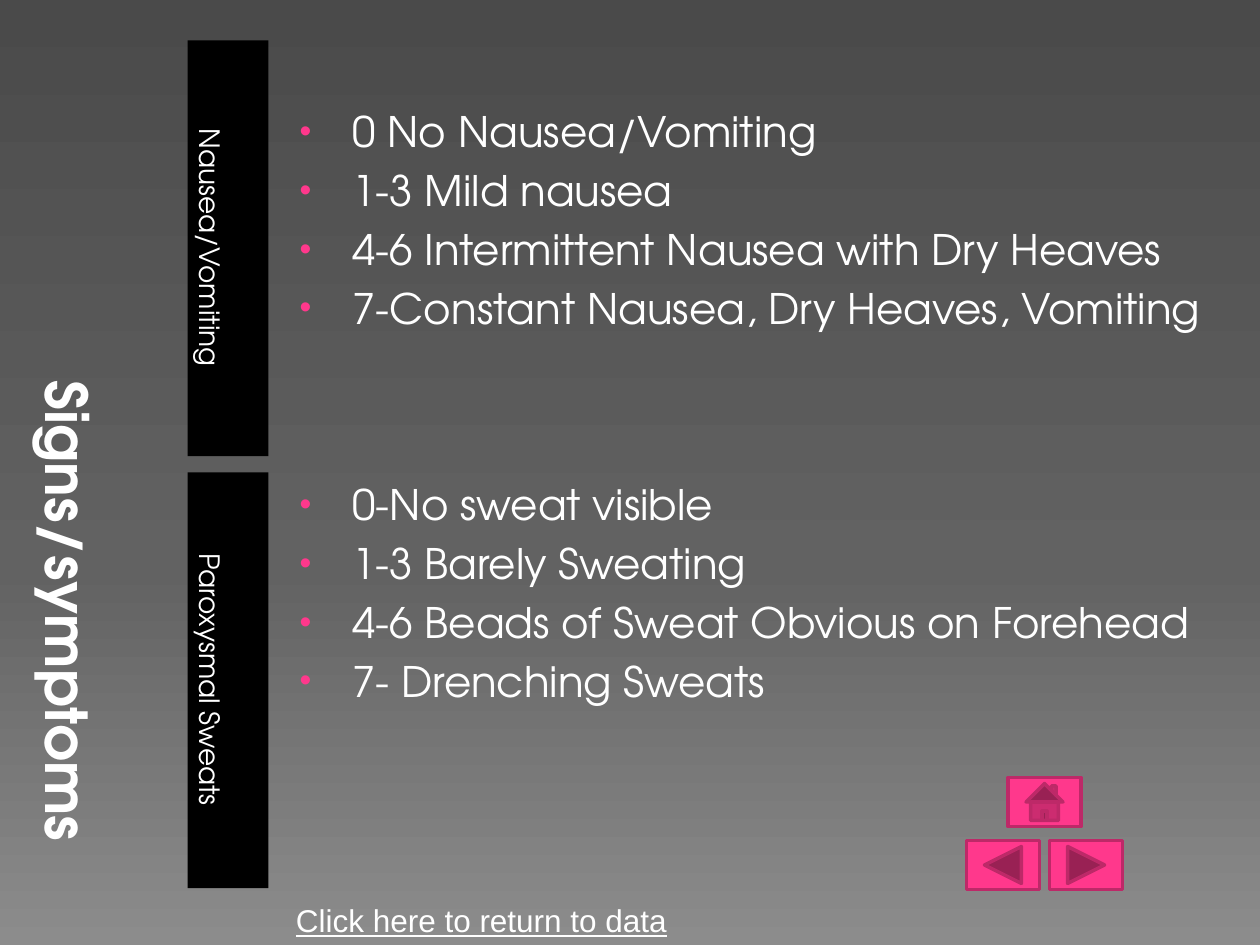
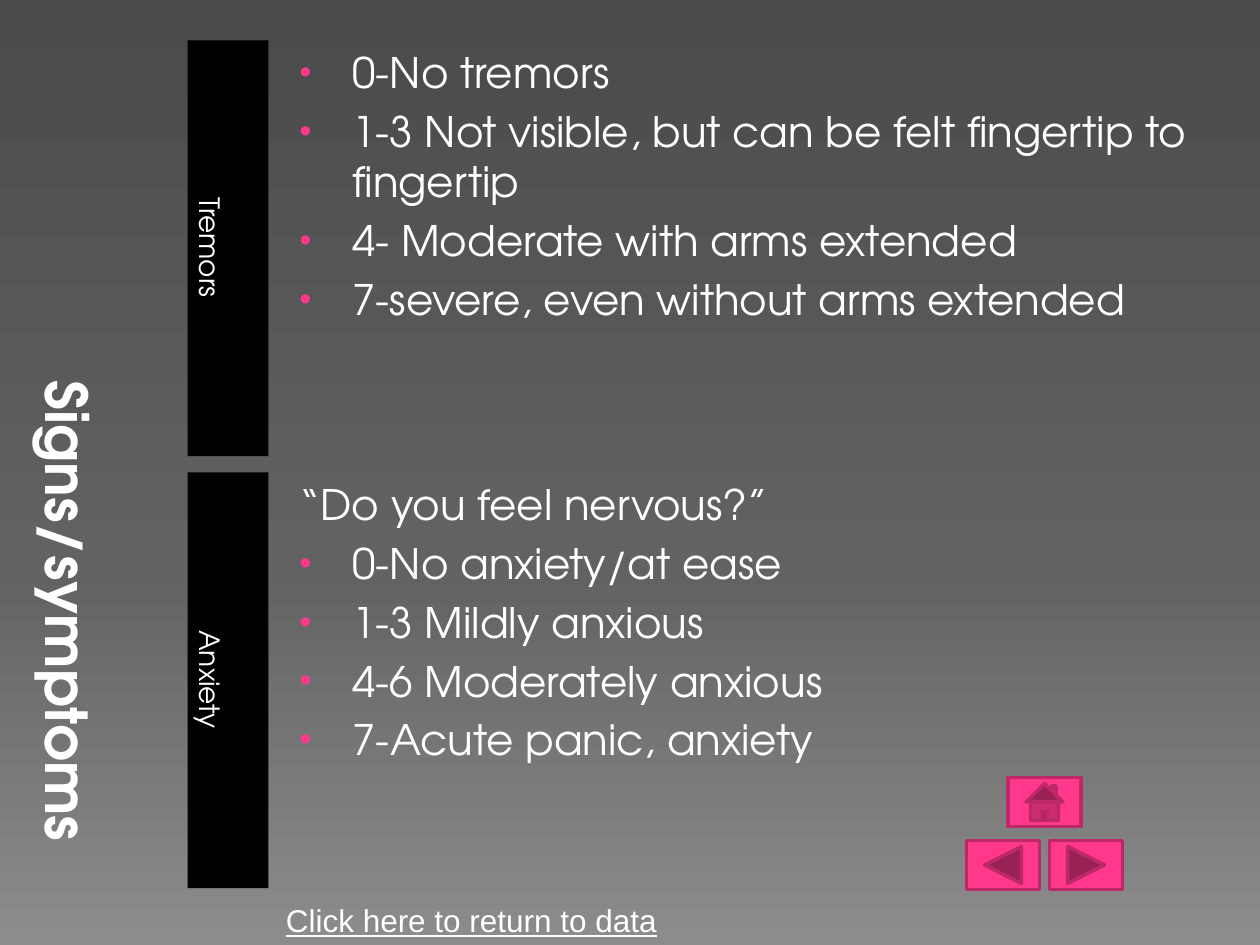
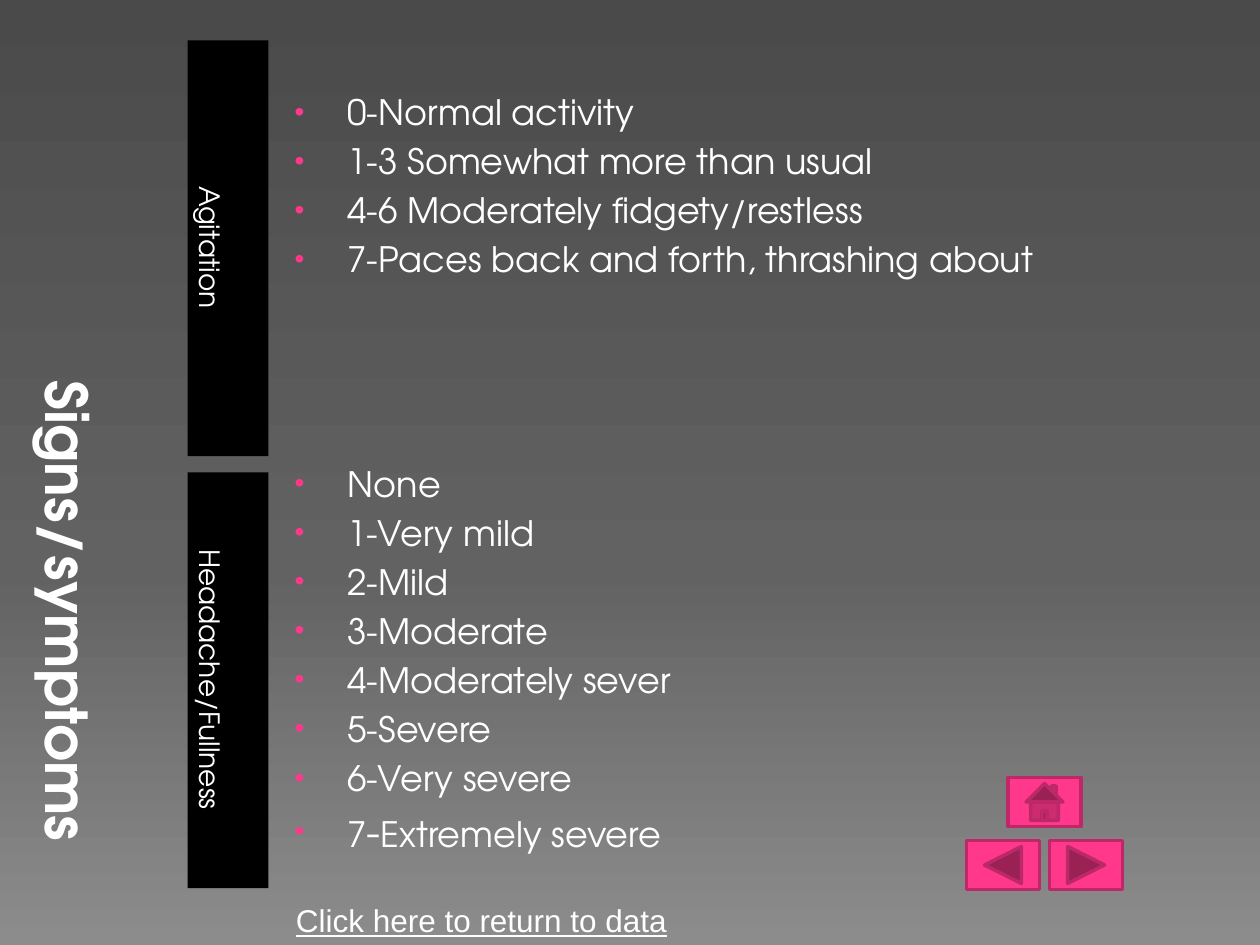
from lxml.etree import SubElement
from pptx import Presentation
from pptx.dml.color import RGBColor
from pptx.enum.shapes import MSO_SHAPE
from pptx.enum.text import MSO_ANCHOR, MSO_AUTO_SIZE, PP_ALIGN
from pptx.oxml.ns import qn
from pptx.util import Inches, Pt

COLORS = {
    "text": "FFFFFF",
    "label": "000000",
    "accent": "FF388C",
    "accent_edge": "BD2968",
}
BACKGROUND_STOPS = [(0, "4A4A4A"), (60, "626262"), (100, "8C8C8C")]
HEAD_FONT = "TeX Gyre Adventor"
LINK_FONT = "Arial"
TITLE_BOX = (0.27, 0.32, 1.17, 6.73)
LABEL_BOXES = [(1.49, 0.32, 0.64, 3.3), (1.49, 3.75, 0.64, 3.3)]
SCALE_BOXES = [(2.21, 0.32, 7.5, 3.3), (2.21, 3.75, 7.5, 3.3)]
NAV_BOX = (7.67, 6.17, 1.24, 0.89)

SLIDES = [
    {
        "labels": ["Nausea/Vomiting", "Paroxysmal Sweats"],
        "scales": [
            ["0 No Nausea/Vomiting", "1-3 Mild nausea",
             "4-6 Intermittent Nausea with Dry Heaves",
             "7-Constant Nausea, Dry Heaves, Vomiting"],
            ["0-No sweat visible", "1-3 Barely Sweating",
             "4-6 Beads of Sweat Obvious on Forehead", "7- Drenching Sweats"],
        ],
        "drops": [0.47, 0],
    },
    {
        "labels": ["Tremors", "Anxiety"],
        "scales": [
            ["0-No tremors",
             "1-3 Not visible, but can be felt fingertip to fingertip",
             "4- Moderate with arms extended",
             "7-severe, even without arms extended"],
            ["“Do you feel nervous?”", "0-No anxiety/at ease",
             "1-3 Mildly anxious", "4-6 Moderately anxious",
             "7-Acute panic, anxiety"],
        ],
        "link_left": 2.17,
    },
    {
        "labels": ["Agitation", "Headache/Fullness"],
        "scales": [
            ["0-Normal activity", "1-3 Somewhat more than usual",
             "4-6 Moderately fidgety/restless",
             "7-Paces back and forth, thrashing about"],
            ["None", "1-Very mild", "2-Mild", "3-Moderate",
             "4-Moderately sever", "5-Severe", "6-Very severe",
             [("7", 20), ("-", 24), ("Extremely severe", 20)]],
        ],
        "boxes": [(2.17, 0.67, 7.5, 2.97), (2.17, 3.17, 7.5, 3.3)],
        "drops": [0, 0.45],
        "size": 20,
    },
]


def rgb(name):
    return RGBColor.from_string(COLORS[name])


def inches(box):
    return [Inches(v) for v in box]


def style_font(p, size, name=HEAD_FONT):
    p.font.size = Pt(size)
    p.font.name = name
    p.font.color.rgb = rgb("text")


def set_indent(p, margin, first_line):
    pPr = p._p.get_or_add_pPr()
    pPr.set("marL", str(Inches(margin)))
    pPr.set("indent", str(Inches(first_line)))
    return pPr


def add_bullet(pPr):
    """Insert the bullet before defRPr, as the schema orders them."""
    color = pPr.makeelement(qn("a:buClr"))
    SubElement(color, qn("a:srgbClr"), val=COLORS["accent"])
    bullet = [
        color,
        pPr.makeelement(qn("a:buSzPct"), val="80000"),
        pPr.makeelement(qn("a:buFont"), typeface="Arial"),
        pPr.makeelement(qn("a:buChar"), char="•"),
    ]
    font = pPr.find(qn("a:defRPr"))
    for el in bullet:
        font.addprevious(el)


def set_background(master):
    fill = master.background.fill
    fill.gradient()
    grad = master.element.find(".//" + qn("p:bg")).find(".//" + qn("a:gradFill"))
    stops = grad.find(qn("a:gsLst"))
    for stop in list(stops):
        stops.remove(stop)
    for pos, color in BACKGROUND_STOPS:
        stop = SubElement(stops, qn("a:gs"), pos=str(pos * 1000))
        SubElement(stop, qn("a:srgbClr"), val=color)
    grad.find(qn("a:lin")).set("ang", "5400000")


def add_box(slide, kind, box, fill):
    sp = slide.shapes.add_shape(kind, *inches(box))
    sp.shadow.inherit = False
    sp.fill.solid()
    sp.fill.fore_color.rgb = rgb(fill)
    sp.line.fill.background()
    return sp


def add_nav(slide, box):
    """Home button centred above the back and forward buttons."""
    left, top, width, height = box
    w, h = 0.58, 0.39
    low = top + height - h
    right = left + width - w
    for kind, x, y in [
        (MSO_SHAPE.ACTION_BUTTON_FORWARD_OR_NEXT, right, low),
        (MSO_SHAPE.ACTION_BUTTON_BACK_OR_PREVIOUS, left, low),
        (MSO_SHAPE.ACTION_BUTTON_HOME, (left + right) / 2, top),
    ]:
        sp = add_box(slide, kind, (x, y, w, h), "accent")
        sp.line.color.rgb = rgb("accent_edge")
        sp.line.width = Pt(2)


def set_title(slide, text, box):
    """Turn the title a quarter clockwise so that it fills the upright box."""
    left, top, width, height = box
    shift = (height - width) / 2
    sp = slide.shapes.title
    sp.left, sp.top, sp.width, sp.height = inches(
        (left - shift, top + shift, height, width))
    sp.rotation = 90
    tf = sp.text_frame
    tf.text = text
    tf.word_wrap = True
    tf.auto_size = MSO_AUTO_SIZE.NONE
    tf.vertical_anchor = MSO_ANCHOR.BOTTOM
    tf.margin_left = tf.margin_bottom = 0
    p = tf.paragraphs[0]
    p.alignment = PP_ALIGN.CENTER
    style_font(p, 33)
    p.font.bold = True
    set_indent(p, 2.43, 0)


def add_label(slide, text, box):
    """Bar with its text running from top to bottom."""
    sp = add_box(slide, MSO_SHAPE.RECTANGLE, box, "label")
    tf = sp.text_frame
    tf.text = text
    tf.vertical_anchor = MSO_ANCHOR.BOTTOM
    tf.margin_bottom = Inches(0.11)
    sp.element.find(".//" + qn("a:bodyPr")).set("vert", "vert")
    p = tf.paragraphs[0]
    p.alignment = PP_ALIGN.CENTER
    style_font(p, 16)


def add_scale(slide, lines, box, size, drop):
    """List of scores; a quoted question has no bullet."""
    tf = slide.shapes.add_textbox(*inches(box)).text_frame
    tf.word_wrap = True
    tf.margin_top = Inches(0.05 + drop)
    for i, line in enumerate(lines):
        p = tf.add_paragraph() if i else tf.paragraphs[0]
        if isinstance(line, str):
            p.text = line
        else:
            for text, run_size in line:
                r = p.add_run()
                r.text = text
                r.font.size = Pt(run_size)
        style_font(p, size)
        if i:
            p.space_before = Pt(size * 0.2)
        pPr = set_indent(p, 0.49, -0.42)
        if line[0] != "“":
            add_bullet(pPr)


def add_return_link(slide, left):
    tf = slide.shapes.add_textbox(*inches((left, 7.1, 3.18, 0.4))).text_frame
    tf.word_wrap = False
    tf.auto_size = MSO_AUTO_SIZE.SHAPE_TO_FIT_TEXT
    p = tf.paragraphs[0]
    p.text = "Click here to return to data"
    style_font(p, 18, LINK_FONT)
    p.font.underline = True


def add_symptom_slide(prs, labels, scales, boxes=SCALE_BOXES, drops=(0, 0),
                      size=24, link_left=2.25):
    slide = prs.slides.add_slide(prs.slide_layouts[5])
    add_nav(slide, NAV_BOX)
    set_title(slide, "Signs/symptoms", TITLE_BOX)
    for label, box in zip(labels, LABEL_BOXES):
        add_label(slide, label, box)
    for lines, box, drop in zip(scales, boxes, drops):
        add_scale(slide, lines, box, size, drop)
    add_return_link(slide, link_left)


def main():
    prs = Presentation()
    prs.slide_width, prs.slide_height = Inches(10), Inches(7.5)
    set_background(prs.slide_master)
    for content in SLIDES:
        add_symptom_slide(prs, **content)
    prs.save("out.pptx")


if __name__ == "__main__":
    main()
